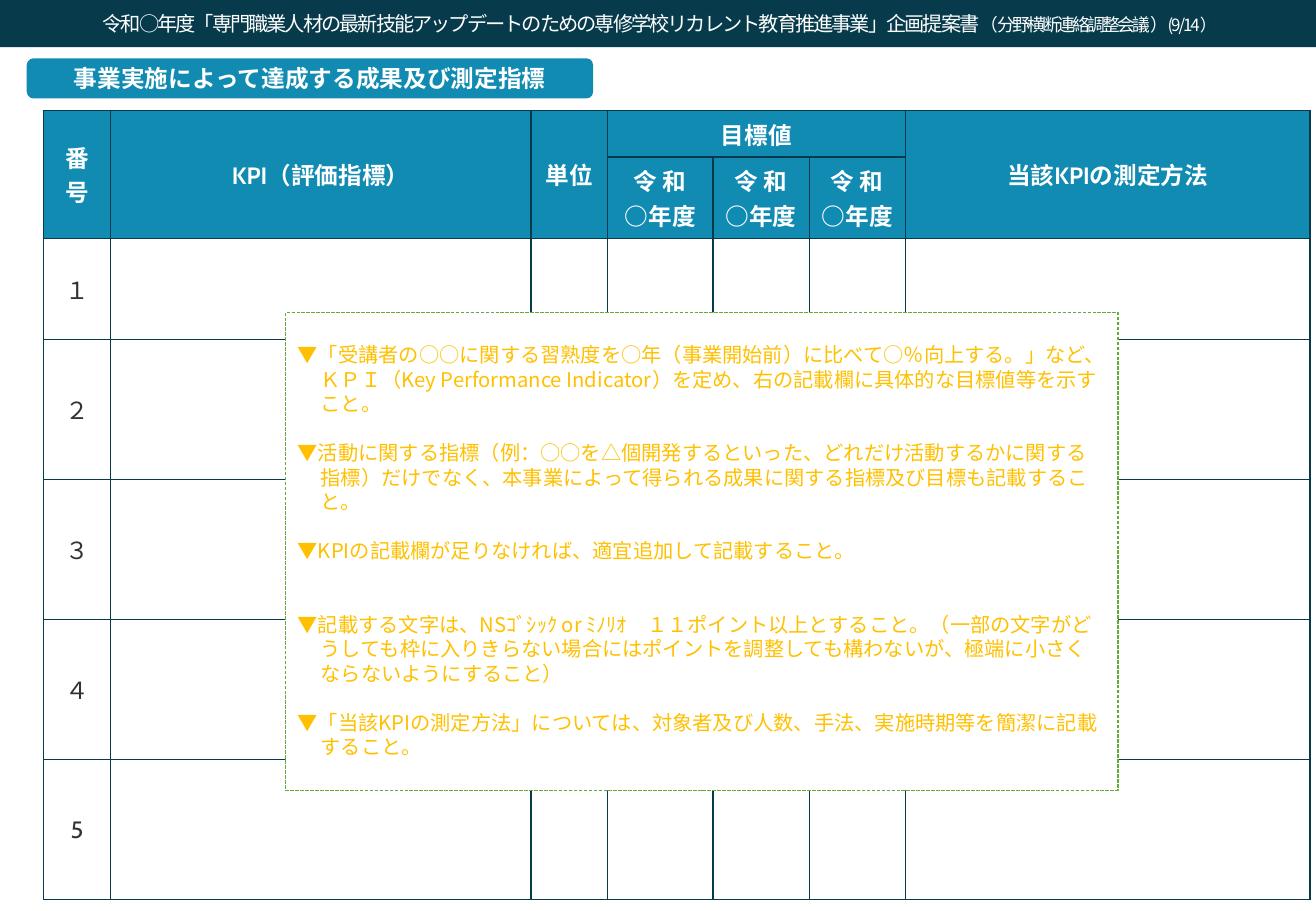
"""Build the slide on target outcomes and their measures."""
from typing import NamedTuple

from pptx import Presentation
from pptx.dml.color import RGBColor
from pptx.enum.dml import MSO_LINE
from pptx.enum.shapes import MSO_SHAPE
from pptx.enum.text import MSO_ANCHOR, MSO_AUTO_SIZE, PP_ALIGN
from pptx.oxml import parse_xml
from pptx.oxml.ns import nsdecls, qn
from pptx.util import Cm, Pt

NAVY = RGBColor(0x07, 0x3B, 0x4C)
BLUE = RGBColor(0x11, 0x8B, 0xB2)
GREEN = RGBColor(0x62, 0xAB, 0x37)
GOLD = RGBColor(0xFF, 0xC0, 0x00)
GREY = RGBColor(0x32, 0x32, 0x32)
WHITE = RGBColor(0xFF, 0xFF, 0xFF)
RECT, ROUND = MSO_SHAPE.RECTANGLE, MSO_SHAPE.ROUNDED_RECTANGLE
DASH = MSO_LINE.SQUARE_DOT
MIDDLE, TOP = MSO_ANCHOR.MIDDLE, MSO_ANCHOR.TOP
CENTER, LEFT = PP_ALIGN.CENTER, PP_ALIGN.LEFT
FIXED = MSO_AUTO_SIZE.NONE
CABIN, NOTO = "Cabin", "Noto Sans CJK JP"
PITCH = 14.5


class Box(NamedTuple):
    left: float
    top: float
    width: float
    height: float

    def cm(self) -> list:
        return [Cm(side) for side in self]


class Face(NamedTuple):
    name: str
    size: float
    color: RGBColor
    bold: bool = False


class Head(NamedTuple):
    row: int
    col: int
    text: str
    rows: int = 1
    cols: int = 1
    font: str = CABIN


class Note(NamedTuple):
    text: str
    gap: int = 1


class Part(NamedTuple):
    text: str
    size: float
    space: float = -1.2


COLS = [1.4, 8.79, 1.6, 2.21, 2.01, 2.01, 8.46]
ROWS = [0.97, 1.7, 2.11] + [2.93] * 4
HEADS = [
    Head(0, 0, "番号", rows=2),
    Head(0, 1, "KPI（評価指標）", rows=2),
    Head(0, 2, "単位", rows=2),
    Head(0, 3, "目標値", cols=3),
    Head(0, 6, "当該KPIの測定方法", rows=2),
] + [Head(1, col, "令 和\n○年度", font=NOTO) for col in (3, 4, 5)]
NOTES = [
    Note("▼「受講者の○○に関する習熟度を○年（事業開始前）に比べて○％向上する。」など、"
         "ＫＰＩ（Key Performance Indicator）を定め、右の記載欄に具体的な目標値等を示すこと。", 0),
    Note("▼活動に関する指標（例：○○を△個開発するといった、どれだけ活動するかに関する"
         "指標）だけでなく、本事業によって得られる成果に関する指標及び目標も記載すること。"),
    Note("▼KPIの記載欄が足りなければ、適宜追加して記載すること。"),
    Note("▼記載する文字は、NSｺﾞｼｯｸ or ﾐﾉﾘｵ　１１ポイント以上とすること。（一部の文字が"
         "どうしても枠に入りきらない場合にはポイントを調整しても構わないが、"
         "極端に小さくならないようにすること）", 2),
    Note("▼「当該KPIの測定方法」については、対象者及び人数、手法、実施時期等を簡潔に記載すること。"),
]
PARTS = [
    Part("令和○年度「専門職業人材の最新技能アップデートのための専修学校"
         "リカレント教育推進事業」企画提案書", 12),
    Part("（", 10.5),
    Part("分野横断連絡調整会議", 10.5, -1.6),
    Part("）", 10.5),
    Part("(9/14）", 10),
]


def style(para, face: Face, align=CENTER) -> None:
    para.alignment = align
    font = para.font
    font.name, font.size, font.bold = face.name, Pt(face.size), face.bold
    font.color.rgb = face.color
    props = para._p.pPr.find(qn("a:defRPr"))
    props.append(parse_xml(f'<a:ea {nsdecls("a")} typeface="{NOTO}"/>'))


def block(slide, kind, box: Box, color: RGBColor):
    shape = slide.shapes.add_shape(kind, *box.cm())
    shape.shadow.inherit = False
    shape.fill.solid()
    shape.fill.fore_color.rgb = color
    shape.line.fill.background()
    return shape


def place(shape, box: Box, anchor):
    """Move a placeholder to its box, in front of all else."""
    shape.left, shape.top, shape.width, shape.height = box.cm()
    shape.element.getparent().append(shape.element)
    frame = shape.text_frame
    frame.word_wrap, frame.auto_size = True, FIXED
    frame.vertical_anchor = anchor
    return frame


def edge(cell) -> None:
    props = cell._tc.get_or_add_tcPr()
    for side in "LRTB":
        props.append(parse_xml(
            f'<a:ln{side} {nsdecls("a")} w="{Pt(1)}"><a:solidFill>'
            f'<a:srgbClr val="{NAVY}"/></a:solidFill></a:ln{side}>'))


def fill(cell, text: str, face: Face) -> None:
    cell.text = text
    for para in cell.text_frame.paragraphs:
        style(para, face)


def add_grid(slide) -> None:
    box = Box(0.91, 2.31, sum(COLS), sum(ROWS))
    grid = slide.shapes.add_table(len(ROWS), len(COLS), *box.cm()).table
    grid.first_row = grid.horz_banding = False
    for col, width in zip(grid.columns, COLS):
        col.width = Cm(width)
    for num, (row, height) in enumerate(zip(grid.rows, ROWS)):
        row.height = Cm(height)
        for cell in row.cells:
            edge(cell)
            cell.vertical_anchor = MIDDLE
            if num < 2:
                cell.fill.solid()
                cell.fill.fore_color.rgb = BLUE
            else:
                cell.fill.background()
    for head in HEADS:
        cell = grid.cell(head.row, head.col)
        if head.rows * head.cols > 1:
            cell.merge(grid.cell(head.row + head.rows - 1, head.col + head.cols - 1))
        fill(cell, head.text, Face(head.font, 14, WHITE, True))
    for row, mark in enumerate("１２３４5", 2):
        fill(grid.cell(row, 0), mark, Face(CABIN, 14, GREY))


def add_notes(shape) -> None:
    frame = place(shape, Box(5.97, 6.53, 17.4, 10), TOP)
    frame.margin_top = Cm(0.63)
    shape.fill.solid()
    shape.fill.fore_color.rgb = WHITE
    shape.line.color.rgb = GREEN
    shape.line.width, shape.line.dash_style = Pt(0.75), DASH
    for num, note in enumerate(NOTES):
        para = frame.add_paragraph() if num else frame.paragraphs[0]
        para.text = note.text
        props = para._p.get_or_add_pPr()
        props.set("marL", str(Cm(0.48)))
        props.set("indent", str(-Cm(0.48)))
        props.append(parse_xml(f'<a:buNone {nsdecls("a")}/>'))
        para.line_spacing = Pt(PITCH)
        para.space_before = Pt(PITCH * note.gap)
        style(para, Face(NOTO, 12, GOLD), LEFT)


def add_title(shape) -> None:
    para = place(shape, Box(1.24, 0.1, 25.1, 0.76), MIDDLE).paragraphs[0]
    for part in PARTS:
        run = para.add_run()
        run.text, run.font.size = part.text, Pt(part.size)
        run._r.get_or_add_rPr().set("spc", str(round(part.space * 100)))
    style(para, Face(NOTO, 12, WHITE))


def main() -> None:
    deck = Presentation()
    deck.slide_width, deck.slide_height = Cm(27.51), Cm(19.05)
    slide = deck.slides.add_slide(deck.slide_layouts[1])
    title, body = slide.placeholders
    label = block(slide, ROUND, Box(0.56, 1.22, 11.84, 0.84), BLUE)
    label.text_frame.text = "事業実施によって達成する成果及び測定指標"
    label.text_frame.vertical_anchor = MIDDLE
    style(label.text_frame.paragraphs[0], Face(CABIN, 14, WHITE, True))
    add_grid(slide)
    add_notes(body)
    block(slide, RECT, Box(0, 0, 27.51, 0.99), NAVY)
    add_title(title)
    deck.save("out.pptx")


if __name__ == "__main__":
    main()
